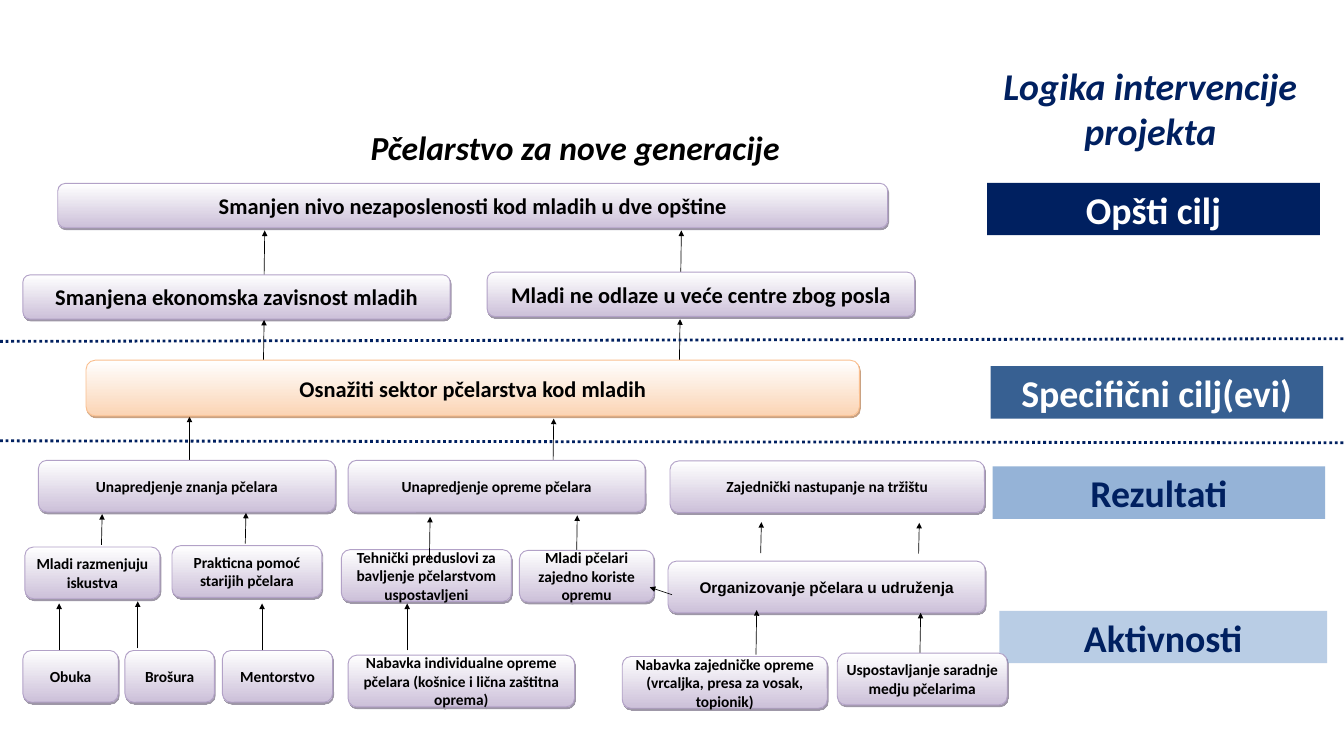
from dataclasses import dataclass
from typing import NamedTuple

from lxml.etree import SubElement
from pptx import Presentation
from pptx.dml.color import RGBColor
from pptx.enum.dml import MSO_LINE
from pptx.enum.shapes import MSO_CONNECTOR, MSO_SHAPE
from pptx.enum.text import MSO_ANCHOR, MSO_AUTO_SIZE, PP_ALIGN
from pptx.oxml.ns import qn
from pptx.util import Inches, Pt

COLUMNS, ROWS = 20, 11.25
WIDTH, HEIGHT = Inches(20), Inches(11.25)
NAVY, BLACK, WHITE = "002060", "000000", "FFFFFF"


class Palette(NamedTuple):
    end: str
    outline: str
    shadow: str


LILAC = Palette("CCC0D9", "B2A1C7", "3F3151")
ORANGE = Palette("FBD4B4", "FABF8F", "974706")


@dataclass(frozen=True)
class Place:
    column: float
    row: float
    columns: float
    rows: float

    def lengths(self) -> tuple[int, int, int, int]:
        return across(self.column), down(self.row), across(self.columns), down(self.rows)


@dataclass(frozen=True)
class TextStyle:
    size: float
    color: str = BLACK
    font: str = "Calibri"
    italic: bool = False


SMALL = TextStyle(16.5)
LARGE = TextStyle(24)


@dataclass(frozen=True)
class Box:
    text: str
    place: Place
    style: TextStyle = SMALL
    palette: Palette = LILAC


@dataclass(frozen=True)
class Level:
    text: str
    place: Place
    fill: str
    color: str = NAVY


@dataclass(frozen=True)
class Arrows:
    lean: float
    rise: float
    starts: tuple[tuple[float, float], ...]


STEP, GOAL, LEVEL = 0.77, 0.66, 0.78

BOXES = [
    Box("Smanjen nivo nezaposlenosti kod mladih u dve opštine", Place(0.86, 2.73, 12.35, GOAL), LARGE),
    Box("Smanjena ekonomska zavisnost mladih", Place(0.34, 4.09, 6.36, GOAL), LARGE),
    Box("Mladi ne odlaze u veće centre zbog posla", Place(7.25, 4.05, 6.36, GOAL), LARGE),
    Box("Osnažiti sektor pčelarstva kod mladih", Place(1.28, 5.36, 11.51, 0.83), LARGE, ORANGE),
    Box("Unapredjenje znanja pčelara", Place(0.57, 6.85, 4.42, STEP)),
    Box("Unapredjenje opreme pčelara", Place(5.18, 6.85, 4.42, STEP)),
    Box("Zajednički nastupanje na tržištu", Place(9.97, 6.86, 4.68, STEP)),
    Box("Mladi razmenjuju iskustva", Place(0.37, 8.14, 2.01, STEP)),
    Box("Prakticna pomoć starijih pčelara", Place(2.56, 8.12, 2.23, STEP)),
    Box("Tehnički preduslovi za bavljenje pčelarstvom uspostavljeni", Place(5.08, 8.18, 2.53, STEP)),
    Box("Mladi pčelari zajedno koriste opremu", Place(7.73, 8.19, 2, STEP)),
    Box("Organizovanje pčelara u udruženja", Place(9.94, 8.35, 4.72, STEP), TextStyle(16.5, font="Arial")),
    Box("Obuka", Place(0.34, 9.68, 1.42, STEP)),
    Box("Brošura", Place(1.86, 9.68, 1.33, STEP)),
    Box("Mentorstvo", Place(3.31, 9.68, 1.64, STEP)),
    Box("Nabavka individualne opreme pčelara (košnice i lična zaštitna oprema)", Place(5.18, 9.75, 3.37, STEP)),
    Box("Nabavka zajedničke opreme (vrcaljka, presa za vosak, topionik)", Place(9.26, 9.77, 3.05, STEP)),
]
LAST_BOX = Box("Uspostavljanje saradnje medju pčelarima", Place(12.46, 9.72, 2.53, STEP))

LEVELS = [
    Level("Opšti cilj", Place(14.69, 2.72, 4.95, LEVEL), NAVY, WHITE),
    Level("Specifični cilj(evi)", Place(14.74, 5.45, 4.95, LEVEL), "376092", WHITE),
    Level("Rezultati", Place(14.77, 6.94, 4.95, LEVEL), "95B3D7"),
    Level("Aktivnosti", Place(14.87, 9.09, 4.88, LEVEL), "B9CDE5"),
]

ARROWS_BEHIND = [
    Arrows(0.01, 0.67, ((10.13, 4.1), (3.93, 4.1), (10.11, 5.42), (3.92, 5.43), (8.23, 6.9), (8.58, 8.34))),
    Arrows(0, 0.7, ((2.82, 6.9),)),
    Arrows(0.01, 0.46, ((3.65, 8.09),)),
]
ARROWS_IN_FRONT = [
    Arrows(0.01, 0.66, ((11.25, 9.74), (6.39, 8.35))),
    Arrows(0, 0.7, ((0.88, 9.68), (2.05, 9.65), (3.9, 9.68), (6.06, 9.68))),
    Arrows(0.01, 0.46, ((1.51, 8.11), (11.32, 8.23), (13.67, 8.24))),
    Arrows(0.01, 0.6, ((13.69, 9.72),)),
    Arrows(-0.33, 0.11, ((10, 8.85),)),
]
DIVIDERS = [(5.08, 5.04), (6.56, 6.59)]


def across(columns: float) -> int:
    return round(WIDTH * columns / COLUMNS)


def down(rows: float) -> int:
    return round(HEIGHT * rows / ROWS)


def color(value: str) -> RGBColor:
    return RGBColor.from_string(value)


def write(shape, lines: list[str], style: TextStyle, anchor, auto_size=MSO_AUTO_SIZE.NONE) -> None:
    frame = shape.text_frame
    frame.word_wrap = True
    frame.auto_size = auto_size
    frame.vertical_anchor = anchor
    for index, line in enumerate(lines):
        paragraph = frame.add_paragraph() if index else frame.paragraphs[0]
        paragraph.alignment = PP_ALIGN.CENTER
        run = paragraph.add_run()
        run.text = line
        run.font.name = style.font
        run.font.size = Pt(style.size)
        run.font.bold = True
        run.font.italic = style.italic
        run.font.color.rgb = color(style.color)


def add_box(slide, box: Box) -> None:
    shape = slide.shapes.add_shape(MSO_SHAPE.ROUNDED_RECTANGLE, *box.place.lengths())
    shape.fill.gradient()
    shape.fill.gradient_angle = 270
    for stop, value in zip(shape.fill.gradient_stops, (WHITE, box.palette.end)):
        stop.color.rgb = color(value)
    shape.line.color.rgb = color(box.palette.outline)
    shape.line.width = Pt(1)
    shape.shadow.inherit = False
    effects = shape._element.spPr.find(qn("a:effectLst"))
    shadow = SubElement(effects, qn("a:outerShdw"), dist=str(Pt(2.2)), dir=str(63 * 60000), algn="ctr", rotWithShape="0")
    tint = SubElement(shadow, qn("a:srgbClr"), val=box.palette.shadow)
    SubElement(tint, qn("a:alpha"), val="50000")
    write(shape, [box.text], box.style, MSO_ANCHOR.MIDDLE)


def add_level(slide, level: Level) -> None:
    shape = slide.shapes.add_shape(MSO_SHAPE.RECTANGLE, *level.place.lengths())
    shape.shadow.inherit = False
    shape.fill.solid()
    shape.fill.fore_color.rgb = color(level.fill)
    shape.line.fill.background()
    write(shape, [level.text], TextStyle(40.5, level.color), MSO_ANCHOR.MIDDLE, MSO_AUTO_SIZE.SHAPE_TO_FIT_TEXT)


def add_line(slide, start: tuple[float, float], end: tuple[float, float], value: str, width: float):
    line = slide.shapes.add_connector(
        MSO_CONNECTOR.STRAIGHT, across(start[0]), down(start[1]), across(end[0]), down(end[1])
    )
    line.line.color.rgb = color(value)
    line.line.width = Pt(width)
    SubElement(line._element.spPr, qn("a:effectLst"))
    return line


def add_arrows(slide, arrows: Arrows) -> None:
    for column, row in arrows.starts:
        end = (column + arrows.lean, row - arrows.rise)
        arrow = add_line(slide, (column, row), end, BLACK, 0.75)
        SubElement(arrow.line._get_or_add_ln(), qn("a:tailEnd"), type="triangle")


def main() -> None:
    presentation = Presentation()
    presentation.slide_width, presentation.slide_height = WIDTH, HEIGHT
    slide = presentation.slides.add_slide(presentation.slide_layouts[5])

    title = slide.shapes.title
    title.left, title.top, title.width, title.height = Place(-1.44, 1.84, 20, 0.71).lengths()
    write(title, ["Pčelarstvo za nove generacije"], TextStyle(36, italic=True),
          MSO_ANCHOR.TOP, MSO_AUTO_SIZE.SHAPE_TO_FIT_TEXT)

    heading = slide.shapes.add_textbox(*Place(14.66, 0.88, 4.92, 1.46).lengths())
    write(heading, ["Logika intervencije", "projekta"], TextStyle(40.5, NAVY, italic=True),
          MSO_ANCHOR.TOP, MSO_AUTO_SIZE.SHAPE_TO_FIT_TEXT)

    for arrows in ARROWS_BEHIND:
        add_arrows(slide, arrows)
    for box in BOXES:
        add_box(slide, box)
    for level in LEVELS:
        add_level(slide, level)
    for left_row, right_row in DIVIDERS:
        divider = add_line(slide, (0, left_row), (COLUMNS, right_row), NAVY, 3)
        divider.line.dash_style = MSO_LINE.ROUND_DOT
    for arrows in ARROWS_IN_FRONT:
        add_arrows(slide, arrows)
    add_box(slide, LAST_BOX)

    presentation.save("out.pptx")


if __name__ == "__main__":
    main()
